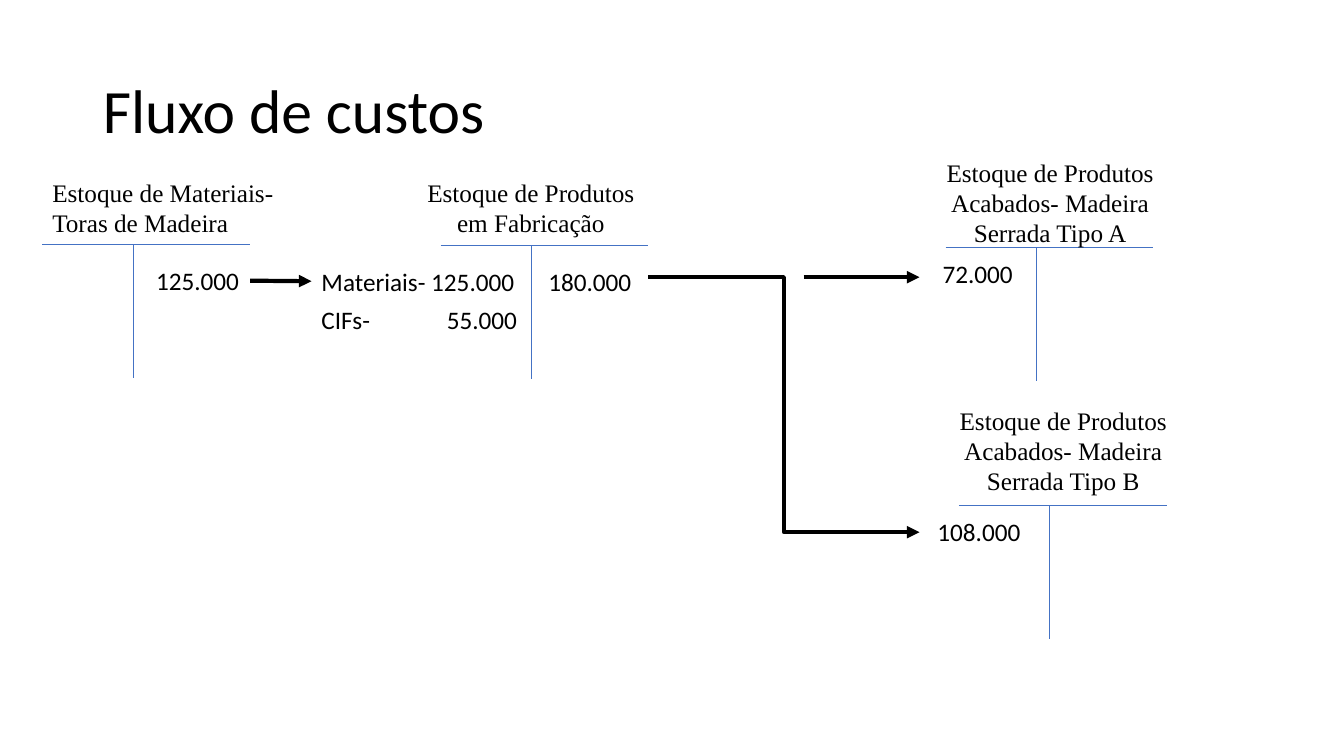
from lxml import etree
from pptx import Presentation
from pptx import util as u
from pptx.dml.color import RGBColor
from pptx.enum import shapes, text
from pptx.oxml.ns import qn

INK = {"text": "000000", "rule": "4472C4", "flow": "000000"}
SANS, SERIF = "Calibri", "Times New Roman"
LEFT, MID = text.PP_ALIGN.LEFT, text.PP_ALIGN.CENTER


def style(frame, words, size, font, align):
    frame.text = words
    frame.word_wrap = True
    para = frame.paragraphs[0]
    para.alignment = align
    for run in para.runs:
        run.font.size = u.Pt(size)
        run.font.name = font
        run.font.color.rgb = RGBColor.from_string(INK["text"])
    return para


def label(slide, box, words, font=SANS, align=LEFT):
    item = slide.shapes.add_textbox(*map(u.Inches, box))
    style(item.text_frame, words, 18, font, align)
    item.text_frame.auto_size = text.MSO_AUTO_SIZE.SHAPE_TO_FIT_TEXT
    return item


def line(slide, start, end, ink, width, kind=shapes.MSO_CONNECTOR.STRAIGHT):
    item = slide.shapes.add_connector(kind, *map(u.Inches, start + end))
    item.line.color.rgb = RGBColor.from_string(INK[ink])
    item.line.width = u.Pt(width)
    etree.SubElement(item._element.spPr, qn("a:effectLst"))
    return item


def arrow(slide, start, end, kind=shapes.MSO_CONNECTOR.STRAIGHT):
    item = line(slide, start, end, "flow", 3, kind)
    etree.SubElement(item.line._get_or_add_ln(), qn("a:tailEnd"), type="triangle")
    return item


def heading(slide, box):
    title = slide.shapes.title
    title.left, title.top, title.width, title.height = map(u.Inches, box)
    frame = title.text_frame
    style(frame, "Fluxo de custos", 44, SANS, LEFT).line_spacing = 0.9
    frame.vertical_anchor = text.MSO_ANCHOR.MIDDLE
    frame.auto_size = text.MSO_AUTO_SIZE.NONE


def account(slide, left, top, name, shift, rise, tall, align=MID):
    """T-account whose bar starts at left, top; its name sits above."""
    stem = left + 0.9
    line(slide, (left, top), (left + 2.06, top), "rule", 0.5)
    line(slide, (stem, top + 0.01), (stem, top + 1.33), "rule", 0.5)
    label(slide, (left + shift, top - rise, 2.59, tall), name, SERIF, align)


def stock(slide, left, top):
    """Raw materials; returns the amount that flows on."""
    account(slide, left, top, "Estoque de Materiais- Toras de Madeira",
            0, 0.71, 0.71, LEFT)
    return label(slide, (left + 1.03, top + 0.16, 1.03, 0.41), "125.000")


def making(slide, left, top):
    """Work in progress; returns the materials entry."""
    account(slide, left, top, "Estoque de Produtos em Fabricação",
            -0.4, 0.72, 0.71)
    entry = label(slide, (left - 1.28, top + 0.16, 2.18, 0.4),
                  "Materiais- 125.000")
    costs = label(slide, (left - 1.28, top + 0.54, 2.18, 0.4), "CIFs-\t55.000")
    label(slide, (left + 0.97, top + 0.16, 2.18, 0.4), "180.000")
    # Right tab lines the two amounts up
    props = costs.text_frame.paragraphs[0]._p.get_or_add_pPr()
    tabs = etree.SubElement(props, qn("a:tabLst"))
    etree.SubElement(tabs, qn("a:tab"), pos=str(u.Inches(1.94)), algn="r")
    return entry


def goods(slide, left, top, grade, rise, amount, box):
    """Finished goods of one grade; box is relative to the bar's start."""
    account(slide, left, top,
            f"Estoque de Produtos Acabados- Madeira Serrada Tipo {grade}",
            -0.26, rise, 1.01)
    across, down, wide = box
    label(slide, (left + across, top + down, wide, 0.4), amount)


def flows(slide, source, entry):
    feed = arrow(slide, (2.48, 2.78), (3.09, 2.78))
    feed.begin_connect(source, 3)
    feed.end_connect(entry, 1)
    arrow(slide, (6.43, 2.75), (9.12, 5.28), shapes.MSO_CONNECTOR.ELBOW)
    arrow(slide, (7.97, 2.75), (9.12, 2.75))


def main():
    deck = Presentation()
    deck.slide_width, deck.slide_height = u.Inches(13.33), u.Inches(7.5)
    slide = deck.slides.add_slide(deck.slide_layouts[5])
    heading(slide, (0.92, 0.4, 11.5, 1.45))
    source = stock(slide, 0.42, 2.42)
    entry = making(slide, 4.37, 2.43)
    goods(slide, 9.38, 2.45, "A", 0.94, "72.000", (-0.13, 0.06, 1))
    goods(slide, 9.51, 5.01, "B", 1.04, "108.000", (-0.31, 0.06, 1.13))
    flows(slide, source, entry)
    deck.save("out.pptx")


if __name__ == "__main__":
    main()
